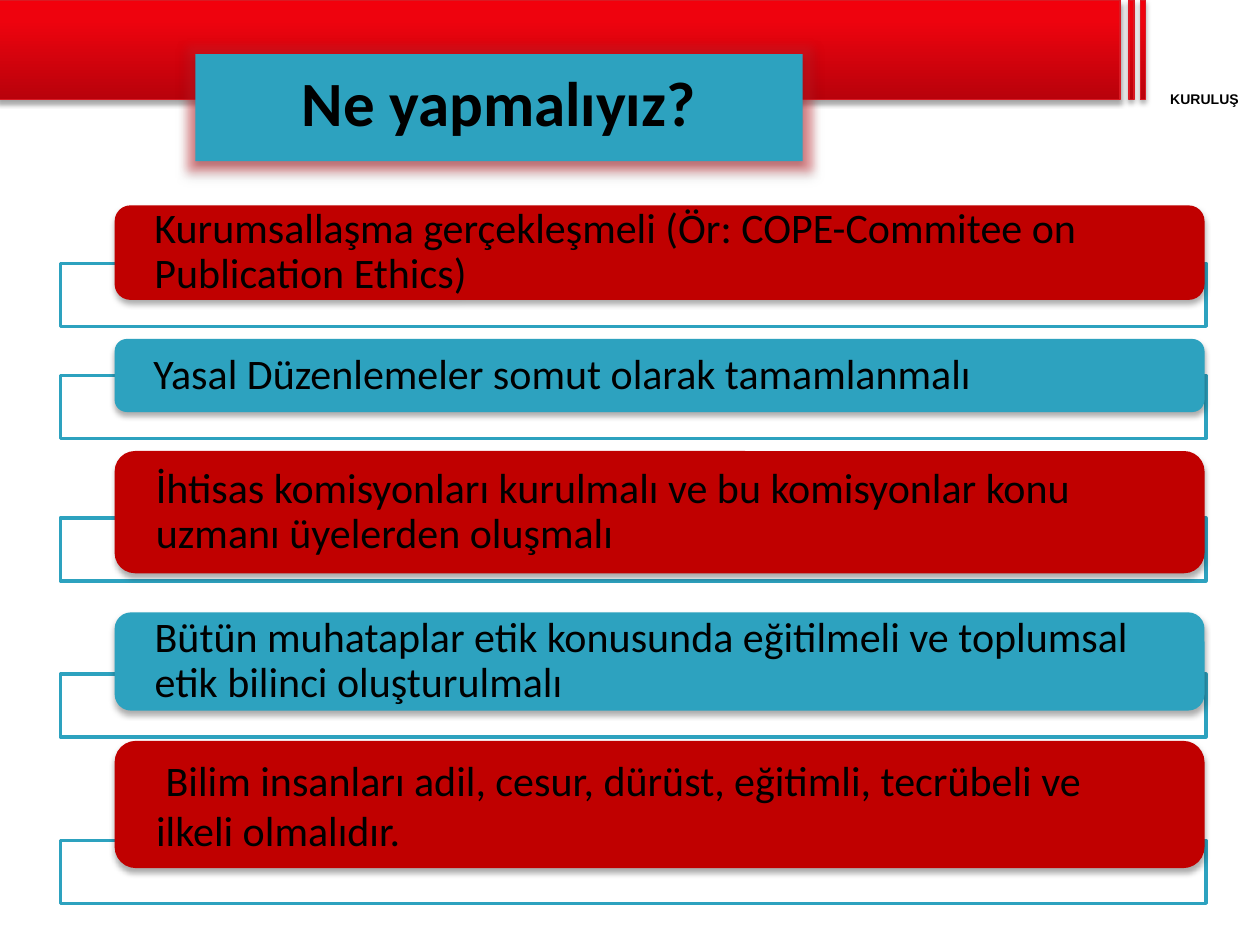
import pptx
import pptx.util
import pptx.dml.color
import pptx.enum.shapes
import pptx.enum.text
import pptx.oxml
import pptx.oxml.ns

Inches, Pt = pptx.util.Inches, pptx.util.Pt
SHAPE = pptx.enum.shapes.MSO_SHAPE
ALIGN = pptx.enum.text.PP_ALIGN
ANCHOR = pptx.enum.text.MSO_ANCHOR
NS = pptx.oxml.ns.nsdecls("a")

RED, TEAL, BLACK, WHITE = "C00000", "2DA2BF", "000000", "FFFFFF"
TITLE = "Ne yapmalıyız?"
LABEL = "KURULUŞ"
BAR_STOPS = [(0, "B8020B"), (80, "EE030E"), (100, "F2000C")]
BARS = [(-0.02, 8.91), (8.96, 0.04), (9.05, 0.04)]  # left, width
BAR_HEIGHT = 0.79

# text, pill top, pill height, frame top, line spacing
ROWS = [
    ("Kurumsallaşma gerçekleşmeli (Ör: COPE-Commitee on Publication Ethics)",
     1.63, 0.75, 2.09, 0.9),
    ("Yasal Düzenlemeler somut olarak tamamlanmalı", 2.69, 0.58, 2.98, 0.9),
    ("İhtisas komisyonları kurulmalı ve bu komisyonlar konu uzmanı üyelerden oluşmalı",
     3.58, 0.97, 4.11, 0.9),
    ("Bütün muhataplar etik konusunda eğitilmeli ve toplumsal etik bilinci oluşturulmalı",
     4.86, 0.78, 5.35, 0.9),
    (" Bilim insanları adil, cesur, dürüst, eğitimli, tecrübeli ve ilkeli olmalıdır.",
     5.88, 1.01, 6.67, 1.0),
]
FRAME_LEFT, FRAME_WIDTH, FRAME_HEIGHT = 0.48, 9.09, 0.5
PILL_LEFT, PILL_WIDTH, PILL_INSET = 0.91, 8.65, 0.28


def rgb(value):
    return pptx.dml.color.RGBColor.from_string(value)


def add_box(kind, left, top, width, height, fill=None, line=None, weight=0):
    sp = slide.shapes.add_shape(kind, *map(Inches, (left, top, width, height)))
    sp.shadow.inherit = False
    if fill:
        sp.fill.solid()
        sp.fill.fore_color.rgb = rgb(fill)
    if line:
        sp.line.color.rgb = rgb(line)
        sp.line.width = Pt(weight)
    else:
        sp.line.fill.background()
    return sp


def add_effects(sp, blur, dist, alpha, glow=""):
    """Give a shape a black shadow straight below it, after an optional glow."""
    sp.shadow.inherit = False
    effects = pptx.oxml.parse_xml(
        f'<a:effectLst {NS}>{glow}<a:outerShdw blurRad="{Pt(blur)}" dist="{Pt(dist)}" '
        f'dir="5400000" rotWithShape="0"><a:srgbClr val="{BLACK}">'
        f'<a:alpha val="{alpha * 1000}"/></a:srgbClr></a:outerShdw></a:effectLst>')
    old = sp._element.spPr.find(pptx.oxml.ns.qn("a:effectLst"))
    old.getparent().replace(old, effects)


def fill_gradient(sp, stops):
    """Fill a shape with a gradient that runs from bottom to top."""
    gs = "".join(f'<a:gs pos="{pos * 1000}"><a:srgbClr val="{c}"/></a:gs>' for pos, c in stops)
    grad = pptx.oxml.parse_xml(f'<a:gradFill {NS} rotWithShape="1"><a:gsLst>{gs}</a:gsLst>'
                               '<a:lin ang="16200000" scaled="0"/></a:gradFill>')
    sp.fill.solid()
    old = sp._element.spPr.find(pptx.oxml.ns.qn("a:solidFill"))
    old.getparent().replace(old, grad)


def write(sp, text, size, font, align, anchor, margins, bold=False, spacing=1.0):
    tf = sp.text_frame
    tf.word_wrap = True
    tf.auto_size = pptx.enum.text.MSO_AUTO_SIZE.NONE
    tf.vertical_anchor = anchor
    tf.margin_left = tf.margin_right = Inches(margins[0])
    tf.margin_top = tf.margin_bottom = Inches(margins[1])
    p = tf.paragraphs[0]
    p.alignment = align
    p.line_spacing = spacing
    p.space_before = Pt(0)
    r = p.add_run()
    r.text = text
    r.font.size, r.font.name, r.font.bold = Pt(size), font, bold
    r.font.color.rgb = rgb(BLACK)


prs = pptx.Presentation()
prs.slide_width, prs.slide_height = Inches(10), Inches(7.5)
slide = prs.slides.add_slide(prs.slide_layouts[5])

for left, width in BARS:
    bar = add_box(SHAPE.RECTANGLE, left, 0, width, BAR_HEIGHT, line="DA1A23", weight=0.75)
    fill_gradient(bar, BAR_STOPS)
    add_effects(bar, 3.1, 1.8, 35)

label = slide.shapes.add_textbox(*map(Inches, (9.05, 0.72, 1.02, 0.13)))
write(label, LABEL, 8, "Arial", ALIGN.CENTER, ANCHOR.TOP, (0, 0), bold=True)

title = slide.shapes.title
title.left, title.top, title.width, title.height = map(Inches, (1.55, 0.43, 4.82, 0.85))
title.fill.solid()
title.fill.fore_color.rgb = rgb(TEAL)
add_effects(title, 3.5, 2.2, 32,
            glow=f'<a:glow rad="{Pt(11)}"><a:srgbClr val="DA1F28">'
                 '<a:alpha val="40000"/></a:srgbClr></a:glow>')
write(title, TITLE, 36, "Calibri", ALIGN.CENTER, ANCHOR.TOP, (0.1, 0.07), bold=True)
slide.shapes._spTree.append(title._element)  # in front of the bars

for i, (text, top, height, frame_top, spacing) in enumerate(ROWS):
    add_box(SHAPE.RECTANGLE, FRAME_LEFT, frame_top, FRAME_WIDTH, FRAME_HEIGHT,
            WHITE, TEAL, 2)
    pill = add_box(SHAPE.ROUNDED_RECTANGLE, PILL_LEFT, top, PILL_WIDTH, height,
                   (RED, TEAL)[i % 2])
    add_effects(pill, 3.5, 2.2, 32)
    write(pill, text, 24, "Calibri", ALIGN.LEFT, ANCHOR.MIDDLE, (PILL_INSET, 0),
          spacing=spacing)

prs.save("out.pptx")
